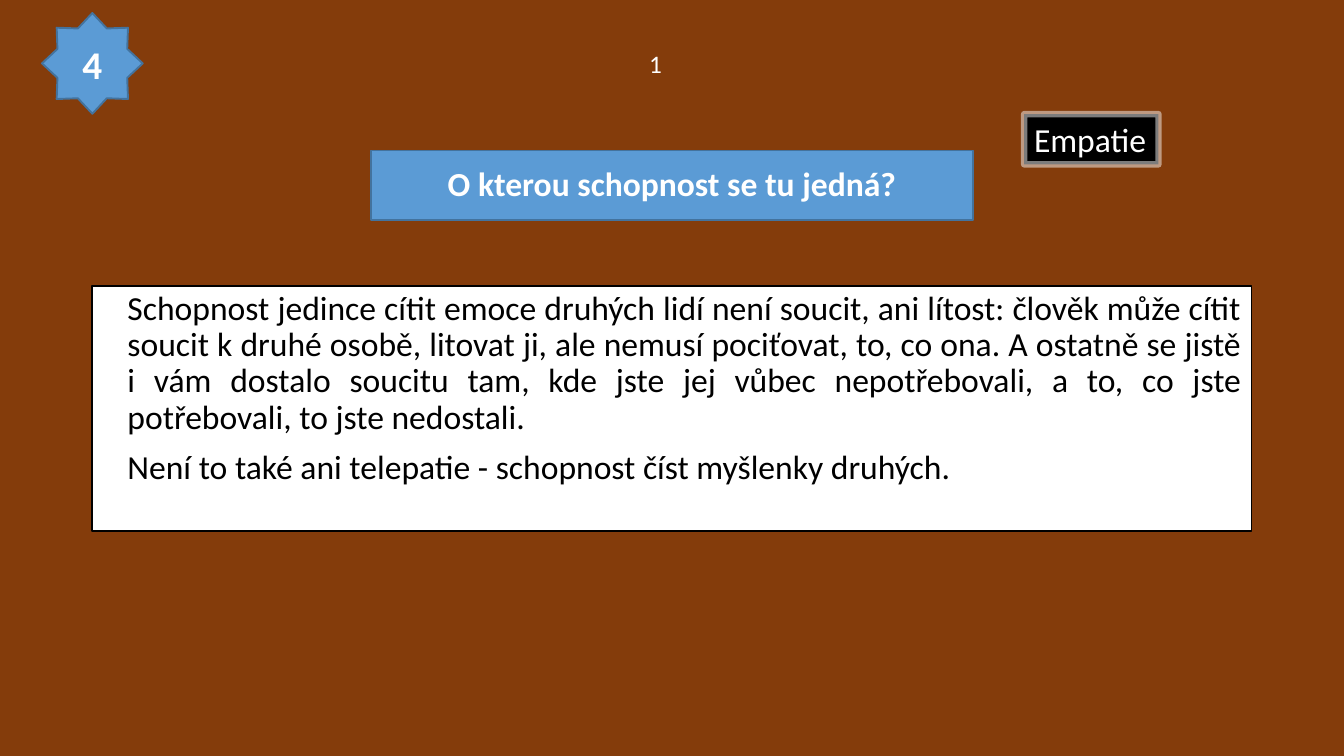
from dataclasses import dataclass
from typing import Optional

from pptx import Presentation
from pptx.dml.color import RGBColor
from pptx.enum import shapes, text
from pptx.oxml import ns
from pptx.util import Pt
from lxml import etree

BROWN = RGBColor(0x84, 0x3C, 0x0B)
BLUE = RGBColor(0x5B, 0x9B, 0xD5)
DARK_BLUE = RGBColor(0x43, 0x73, 0x9E)
WHITE = RGBColor(0xFF, 0xFF, 0xFF)
BLACK = RGBColor(0, 0, 0)
PALE = RGBColor(0xF9, 0xF9, 0xF9)

RECT = shapes.MSO_SHAPE.RECTANGLE
STAR = shapes.MSO_SHAPE.STAR_8_POINT
LEFT, CENTER, JUSTIFY = (text.PP_ALIGN.LEFT, text.PP_ALIGN.CENTER,
                         text.PP_ALIGN.JUSTIFY)
TOP, MIDDLE = text.MSO_ANCHOR.TOP, text.MSO_ANCHOR.MIDDLE


@dataclass(frozen=True)
class Panel:
    """A text panel; lengths are in points."""
    lines: tuple[str, ...]
    left: float
    top: float
    width: float
    height: float
    size: float = 24
    color: RGBColor = WHITE
    bold: bool = False
    fill: Optional[RGBColor] = None
    outline: Optional[RGBColor] = None
    outline_width: float = 1.35
    align: text.PP_ALIGN = CENTER
    anchor: text.MSO_ANCHOR = MIDDLE
    wrap: bool = True
    spacing: float = 1.0
    space_before: float = 0
    indent: float = 0


QUESTION = Panel(("O kterou schopnost se tu jedná?",), 265, 107.5, 430, 49.5,
                 bold=True, fill=BLUE, outline=DARK_BLUE, spacing=0.9)
DESCRIPTION = Panel(
    ("Schopnost jedince cítit emoce druhých lidí není soucit, ani lítost: "
     "člověk může cítit soucit k druhé osobě, litovat ji, ale nemusí "
     "pociťovat, to, co ona. A ostatně se jistě i vám dostalo soucitu tam, "
     "kde jste jej vůbec nepotřebovali, a to, co jste potřebovali, to jste "
     "nedostali.",
     "Není to také ani telepatie - schopnost číst myšlenky druhých."),
    66, 204.5, 828, 175, color=BLACK, fill=WHITE, outline=BLACK,
    align=JUSTIFY, anchor=TOP, spacing=0.9, space_before=10, indent=18)
NUMBER = Panel(("4",), 30, 9.3, 72, 72, size=28, bold=True,
               fill=BLUE, outline=DARK_BLUE)
COUNTER = Panel(("1",), 456.5, 31, 24, 29, size=18, align=LEFT, anchor=TOP,
                wrap=False)
ANSWER = Panel(("Empatie",), 731.5, 81.5, 96, 36, fill=BLACK, outline=PALE,
               outline_width=4.6, align=LEFT, anchor=TOP, wrap=False)


def format_object(target: object, values: dict) -> None:
    for name, value in values.items():
        setattr(target, name, value)


def dress(box, panel: Panel):
    """Place a shape, colour it and write its text."""
    format_object(box, {"left": Pt(panel.left), "top": Pt(panel.top),
                        "width": Pt(panel.width), "height": Pt(panel.height)})
    if panel.fill is not None:
        box.fill.solid()
        box.fill.fore_color.rgb = panel.fill
    if panel.outline is not None:
        box.line.color.rgb = panel.outline
        box.line.width = Pt(panel.outline_width)
    frame = box.text_frame
    format_object(frame, {"word_wrap": panel.wrap,
                          "vertical_anchor": panel.anchor,
                          "auto_size": text.MSO_AUTO_SIZE.NONE})
    for index, line in enumerate(panel.lines):
        para = frame.add_paragraph() if index else frame.paragraphs[0]
        format_object(para, {"alignment": panel.align,
                             "line_spacing": panel.spacing,
                             "space_before": Pt(panel.space_before)})
        if panel.indent:
            para._p.get_or_add_pPr().set("marL", str(Pt(panel.indent)))
        span = para.add_run()
        span.text = line
        format_object(span.font, {"name": "Calibri", "size": Pt(panel.size),
                                  "bold": panel.bold})
        span.font.color.rgb = panel.color
    return box


def add_panel(page, kind: shapes.MSO_SHAPE, panel: Panel):
    box = page.shapes.add_shape(kind, 0, 0, Pt(panel.width), Pt(panel.height))
    box.shadow.inherit = False
    return dress(box, panel)


def fade_outline(box, percent: int) -> None:
    color = box.line._ln.find(".//" + ns.qn("a:srgbClr"))
    etree.SubElement(color, ns.qn("a:alpha"), val=str(percent * 1000))


def main() -> None:
    deck = Presentation()
    deck.slide_width, deck.slide_height = Pt(960), Pt(540)
    page = deck.slides.add_slide(deck.slide_layouts[5])
    page.background.fill.solid()
    page.background.fill.fore_color.rgb = BROWN

    # Question and description
    dress(page.shapes.title, QUESTION)
    add_panel(page, RECT, DESCRIPTION)

    # Number star and counter
    add_panel(page, STAR, NUMBER)
    dress(page.shapes.add_textbox(0, 0, 0, 0), COUNTER)

    # Answer with a half-transparent frame
    fade_outline(add_panel(page, RECT, ANSWER), 50)

    deck.save("out.pptx")


if __name__ == "__main__":
    main()
